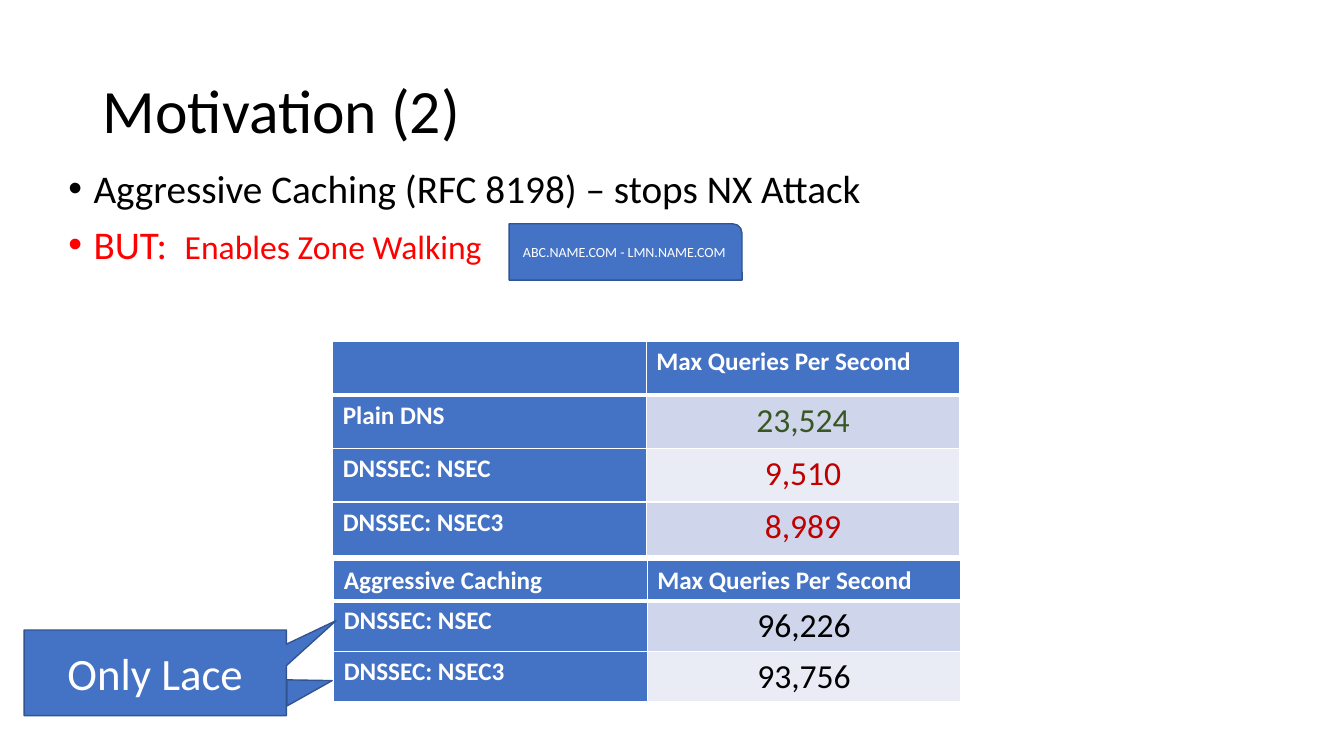
"""Builds the Motivation (2) slide with two query-rate tables."""
from lxml import etree
from pptx import Presentation
from pptx.dml.color import RGBColor
from pptx.enum.shapes import MSO_SHAPE
from pptx.enum.text import MSO_ANCHOR, PP_ALIGN
from pptx.oxml.ns import qn
from pptx.util import Inches, Pt

LEFT, CENTER = PP_ALIGN.LEFT, PP_ALIGN.CENTER
MIDDLE = MSO_ANCHOR.MIDDLE
CALLOUT, TRIANGLE = MSO_SHAPE.RECTANGULAR_CALLOUT, MSO_SHAPE.ISOSCELES_TRIANGLE
ROUND_CORNER = MSO_SHAPE.ROUND_1_RECTANGLE

FONT = "Calibri"
COLORS = {
    "black": "000000", "white": "FFFFFF", "red": "FF0000", "blue": "4472C4",
    "outline": "325491", "odd": "CFD5EA", "even": "E9EBF5",
    "green": "385723", "dark_red": "C00000",
}

TITLE = "Motivation (2)"
BULLETS = [
    [("Aggressive Caching (RFC 8198) – stops NX Attack", 28, "black")],
    [("BUT:  ", 28, "red"), ("Enables Zone Walking", 24, "red")],
]
PLAIN_TABLE = {
    "left": 3.3, "top": 3.39, "heights": [0.53] * 4,
    "rows": [
        ("", "Max Queries Per Second", "white"),
        ("Plain DNS", "23,524", "green"),
        ("DNSSEC: NSEC", "9,510", "dark_red"),
        ("DNSSEC: NSEC3", "8,989", "dark_red"),
    ],
}
CACHING_TABLE = {
    "left": 3.31, "top": 5.56, "heights": [0.4, 0.5, 0.5],
    "rows": [
        ("Aggressive Caching", "Max Queries Per Second", "white"),
        ("DNSSEC: NSEC", "96,226", "black"),
        ("DNSSEC: NSEC3", "93,756", "black"),
    ],
}
COLUMN_WIDTH = 3.11


def color(name):
    return RGBColor.from_string(COLORS[name])


def format_run(run, size, color_name, bold=False):
    run.font.name = FONT
    run.font.size = Pt(size)
    run.font.bold = bold
    run.font.color.rgb = color(color_name)


def add_title(slide):
    title = slide.shapes.title
    title.left, title.top = Inches(0.92), Inches(0.4)
    title.width, title.height = Inches(11.5), Inches(1.45)
    title.text_frame.text = TITLE
    title.text_frame.vertical_anchor = MIDDLE
    paragraph = title.text_frame.paragraphs[0]
    paragraph.alignment = LEFT
    paragraph.line_spacing = 0.9
    format_run(paragraph.runs[0], 44, "black")


def add_bullets(slide):
    box = slide.shapes.add_textbox(Inches(0.58), Inches(1.63), Inches(11.5), Inches(1.2))
    frame = box.text_frame
    frame.word_wrap = True
    for index, parts in enumerate(BULLETS):
        paragraph = frame.add_paragraph() if index else frame.paragraphs[0]
        paragraph.line_spacing = 0.9
        paragraph.space_before = Pt(10)
        for text, size, color_name in parts:
            run = paragraph.add_run()
            run.text = text
            format_run(run, size, color_name)
        properties = paragraph._p.get_or_add_pPr()
        properties.set("marL", str(Inches(0.25)))
        properties.set("indent", str(Inches(-0.25)))
        etree.SubElement(properties, qn("a:buFont"), typeface="Arial")
        etree.SubElement(properties, qn("a:buChar"), char="•")


def add_borders(cell, row):
    widths = {"lnL": 1, "lnR": 1, "lnT": 3 if row == 1 else 1, "lnB": 1 if row else 3}
    properties = cell._tc.get_or_add_tcPr()
    for side, width in widths.items():
        line = etree.SubElement(properties, qn("a:" + side), w=str(Pt(width)))
        fill = etree.SubElement(line, qn("a:solidFill"))
        etree.SubElement(fill, qn("a:srgbClr"), val=COLORS["white"])


def fill_cell(cell, text, row, is_value, color_name):
    add_borders(cell, row)
    band = "odd" if row % 2 else "even"
    cell.fill.solid()
    cell.fill.fore_color.rgb = color(band if is_value else "blue")
    if not text:
        return
    cell.text_frame.text = text
    paragraph = cell.text_frame.paragraphs[0]
    paragraph.alignment = CENTER if is_value else LEFT
    format_run(paragraph.runs[0], 24 if is_value else 18, color_name, not is_value)


def add_query_table(slide, content):
    rows, heights = content["rows"], content["heights"]
    table = slide.shapes.add_table(
        len(rows), 2, Inches(content["left"]), Inches(content["top"]),
        Inches(2 * COLUMN_WIDTH), Inches(sum(heights))).table
    for column in table.columns:
        column.width = Inches(COLUMN_WIDTH)
    for row, (label, value, value_color) in enumerate(rows):
        table.rows[row].height = Inches(heights[row])
        fill_cell(table.cell(row, 0), label, row, False, "white")
        fill_cell(table.cell(row, 1), value, row, row > 0, value_color)


def add_blue_shape(slide, kind, box, text="", size=18):
    shape = slide.shapes.add_shape(kind, *map(Inches, box))
    shape.shadow.inherit = False
    shape.fill.solid()
    shape.fill.fore_color.rgb = color("blue")
    shape.line.color.rgb = color("outline")
    shape.line.width = Pt(1)
    if text:
        shape.text_frame.text = text
        shape.text_frame.word_wrap = True
        shape.text_frame.vertical_anchor = MIDDLE
        paragraph = shape.text_frame.paragraphs[0]
        paragraph.alignment = CENTER
        format_run(paragraph.runs[0], size, "white")
    return shape


def main():
    presentation = Presentation()
    presentation.slide_width = Inches(13.33)
    presentation.slide_height = Inches(7.5)
    slide = presentation.slides.add_slide(presentation.slide_layouts[5])
    add_title(slide)
    add_bullets(slide)
    add_query_table(slide, CACHING_TABLE)
    callout = add_blue_shape(slide, CALLOUT, (0.24, 6.25, 2.6, 0.85), "Only Lace", 32)
    callout.adjustments[0] = 0.69
    callout.adjustments[1] = -0.61
    add_query_table(slide, PLAIN_TABLE)
    pointer = add_blue_shape(slide, TRIANGLE, (2.94, 6.65, 0.26, 0.45))
    pointer.rotation = 90
    pointer.adjustments[0] = 0.03
    add_blue_shape(slide, ROUND_CORNER, (5.05, 2.22, 2.31, 0.56),
                   "ABC.NAME.COM - LMN.NAME.COM", 10)
    presentation.save("out.pptx")


if __name__ == "__main__":
    main()
